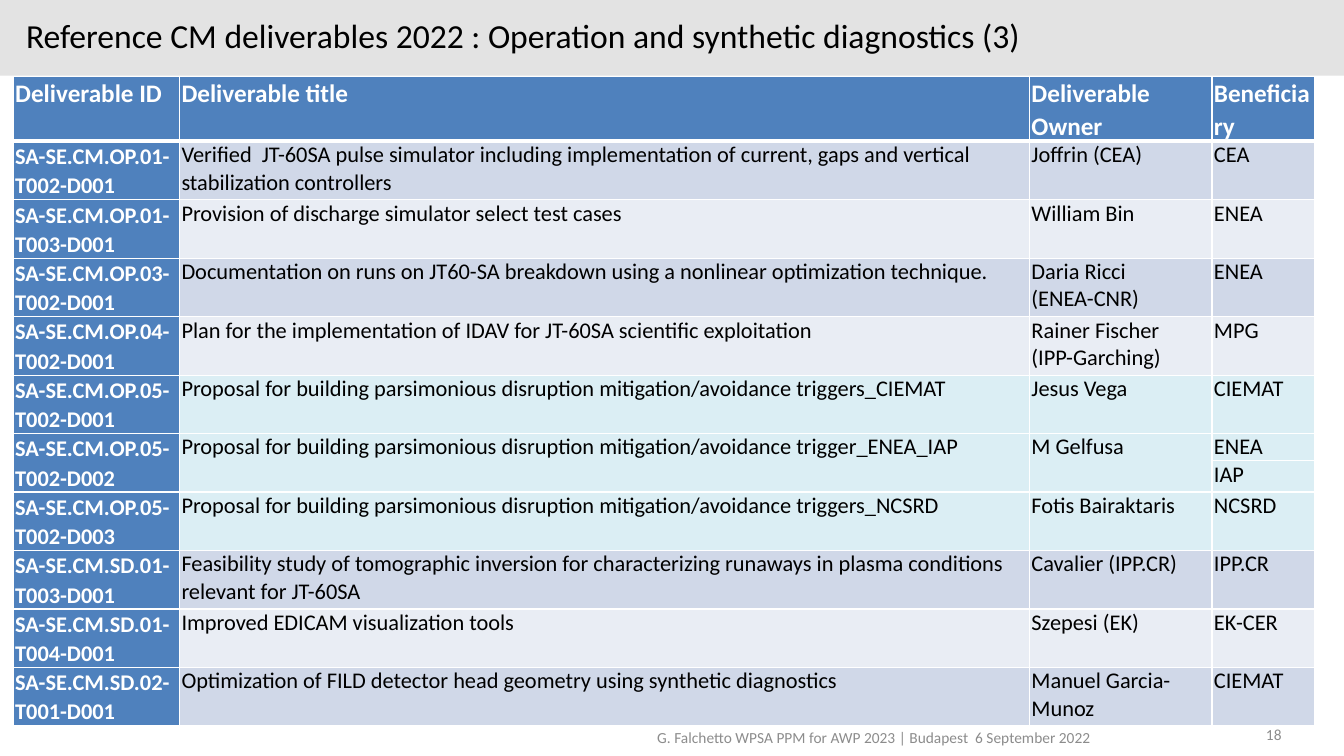
from dataclasses import dataclass
from lxml import etree
from pptx import Presentation, util as u
from pptx.dml.color import RGBColor
from pptx.enum import shapes, text
from pptx.oxml import ns


@dataclass(frozen=True)
class Theme:
    font: str = "Calibri"
    white: str = "FFFFFF"
    black: str = "000000"
    grey: str = "8C8C8C"
    bar: str = "E3E3E3"
    blue: str = "4F81BD"
    odd: str = "D0D8E8"
    even: str = "E9EDF4"
    teal: str = "DBEEF4"
    title: int = 24
    head: int = 18
    body: int = 16
    foot: int = 11
    rule: int = 1
    thick: int = 3


T = Theme()
WIDE, HIGH = u.Inches(13.33), u.Inches(7.5)
SLIDE = (0, 0, WIDE, HIGH)
COLS = (1.65, 8.43, 1.81, 1.02)
HEAD_ROW, FULL_ROW, ENEA_ROW, IAP_ROW = 0.64, 0.58, 0.27, 0.31

HEADS = ("Deliverable ID", "Deliverable title", "Deliverable Owner", "Beneficiary")
ITEMS = (
    ("SA-SE.CM.OP.01-T002-D001",
     "Verified  JT-60SA pulse simulator including implementation of current, "
     "gaps and vertical stabilization controllers", "Joffrin (CEA)", "CEA"),
    ("SA-SE.CM.OP.01-T003-D001",
     "Provision of discharge simulator select test cases", "William Bin", "ENEA"),
    ("SA-SE.CM.OP.03-T002-D001",
     "Documentation on runs on JT60-SA breakdown using a nonlinear optimization technique.",
     "Daria Ricci\n(ENEA-CNR)", "ENEA"),
    ("SA-SE.CM.OP.04-T002-D001",
     "Plan for the implementation of IDAV for JT-60SA scientific exploitation",
     "Rainer Fischer\n(IPP-Garching)", "MPG"),
    ("SA-SE.CM.OP.05-T002-D001",
     "Proposal for building parsimonious disruption mitigation/avoidance triggers_CIEMAT",
     "Jesus Vega", "CIEMAT"),
    ("SA-SE.CM.OP.05-T002-D002",
     "Proposal for building parsimonious disruption mitigation/avoidance trigger_ENEA_IAP",
     "M Gelfusa", "ENEA", "IAP"),
    ("SA-SE.CM.OP.05-T002-D003",
     "Proposal for building parsimonious disruption mitigation/avoidance triggers_NCSRD",
     "Fotis Bairaktaris", "NCSRD"),
    ("SA-SE.CM.SD.01-T003-D001",
     "Feasibility study of tomographic inversion for characterizing runaways in "
     "plasma conditions relevant for JT-60SA", "Cavalier (IPP.CR)", "IPP.CR"),
    ("SA-SE.CM.SD.01-T004-D001", "Improved EDICAM visualization tools",
     "Szepesi (EK)", "EK-CER"),
    ("SA-SE.CM.SD.02-T001-D001",
     "Optimization of FILD detector head geometry using synthetic diagnostics",
     "Manuel Garcia-Munoz", "CIEMAT"),
)


def part(box, x, y, w, h):
    """Return the part of a box given by percentages of its size."""
    left, top, wide, high = box
    return (left + int(wide * x / 100), top + int(high * y / 100),
            int(wide * w / 100), int(high * h / 100))


def style(para, size, color, bold=False):
    font = para.font
    font.name, font.size, font.bold = T.font, u.Pt(size), bold
    font.color.rgb = RGBColor.from_string(color)


def paint(fill, color):
    fill.solid()
    fill.fore_color.rgb = RGBColor.from_string(color)


def label(slide, box, words, size, color):
    frame = slide.shapes.add_textbox(*box).text_frame
    frame.word_wrap = True
    frame.text = words
    style(frame.paragraphs[0], size, color)
    return frame


def banner(slide, box):
    bar = slide.shapes.add_shape(shapes.MSO_SHAPE.RECTANGLE, *box)
    bar.shadow.inherit = False
    paint(bar.fill, T.bar)
    bar.line.fill.background()
    frame = label(slide, part(box, 1.2, 17.33, 82.52, 66.67),
                  "Reference CM deliverables 2022 : Operation and synthetic diagnostics (3)",
                  T.title, T.black)
    frame.vertical_anchor = text.MSO_ANCHOR.MIDDLE
    frame.paragraphs[0].line_spacing = u.Pt(T.title)


def edge(cell, below):
    """Draw white borders, with the given width at the bottom."""
    props = cell._tc.get_or_add_tcPr()
    for spot, side in enumerate("LRTB"):
        width = below if side == "B" else T.rule
        line = etree.Element(ns.qn(f"a:ln{side}"), w=str(u.Pt(width)))
        fill = etree.SubElement(line, ns.qn("a:solidFill"))
        etree.SubElement(fill, ns.qn("a:srgbClr"), val=T.white)
        props.insert(spot, line)


def fill_cell(cell, words, color, size, strong, below=T.rule):
    cell.margin_left = cell.margin_right = u.Inches(0.02)
    cell.margin_top = cell.margin_bottom = 0
    cell.text = words
    for para in cell.text_frame.paragraphs:
        if strong:
            para.line_spacing, para.space_after = 1.07, u.Pt(8)
        style(para, size, T.white if strong else T.black, strong)
    paint(cell.fill, color)
    edge(cell, below)


def tint(code, row):
    if ".OP.05" in code:
        return T.teal
    return T.odd if row % 2 else T.even


def deliverables(slide, box):
    rows = [HEAD_ROW]
    for item in ITEMS:
        rows += [ENEA_ROW, IAP_ROW] if len(item) > len(COLS) else [FULL_ROW]
    table = slide.shapes.add_table(len(rows), len(COLS), *box).table
    for col, share in zip(table.columns, COLS):
        col.width = int(box[2] * share / sum(COLS))
    for row, share in zip(table.rows, rows):
        row.height = int(box[3] * share / sum(rows))
    for col, words in enumerate(HEADS):
        fill_cell(table.cell(0, col), words, T.blue, T.head, True, T.thick)
    row = 1
    for item in ITEMS:
        color = tint(item[0], row)
        extra = item[len(COLS):]
        for col, words in enumerate(item[:len(COLS)]):
            cell = table.cell(row, col)
            if extra and col < len(COLS) - 1:
                cell.merge(table.cell(row + 1, col))
            fill_cell(cell, words, T.blue if col == 0 else color, T.body, col == 0)
        for words in extra:
            row += 1
            fill_cell(table.cell(row, len(COLS) - 1), words, color, T.body, False)
        row += 1


def footer(slide, box):
    label(slide, part(box, 48.16, 8.33, 42.09, 91.67),
          "G. Falchetto WPSA PPM for AWP 2023 | Budapest  6 September 2022",
          T.foot, T.grey)
    page = label(slide, part(box, 90.17, 0, 5.93, 61.11), "18", T.foot, T.grey)
    page.paragraphs[0].alignment = text.PP_ALIGN.RIGHT


def main():
    deck = Presentation()
    deck.slide_width, deck.slide_height = WIDE, HIGH
    slide = deck.slides.add_slide(deck.slide_layouts[6])
    banner(slide, part(SLIDE, 0, 0, 100, 10))
    footer(slide, part(SLIDE, 0, 95.2, 100, 4.8))
    deliverables(slide, part(SLIDE, 0.98, 10.13, 96.85, 85.87))
    deck.save("out.pptx")


if __name__ == "__main__":
    main()
